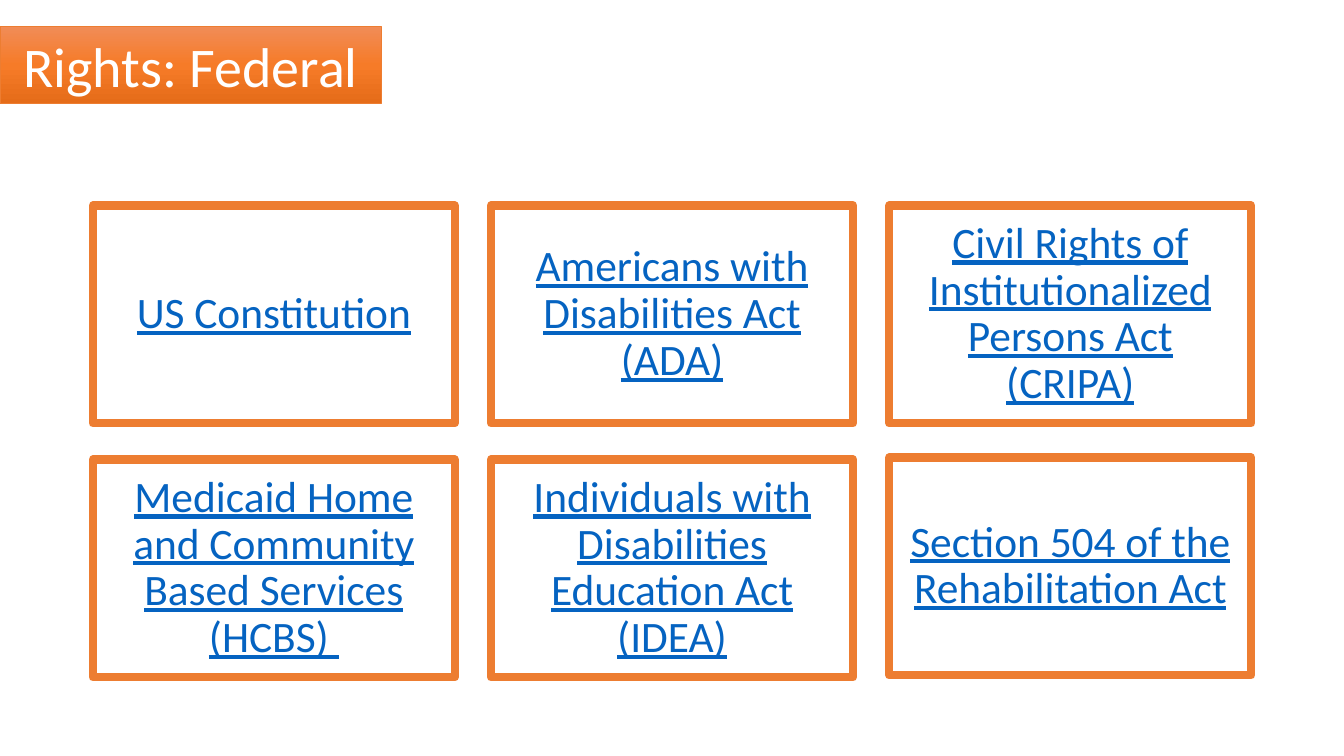
from copy import deepcopy
from dataclasses import dataclass

from pptx import Presentation
from pptx.dml.color import RGBColor
from pptx.enum.shapes import MSO_SHAPE
from pptx.enum.text import MSO_ANCHOR, PP_ALIGN
from pptx.shapes.autoshape import Shape
from pptx.slide import Slide
from pptx.util import Inches, Pt

ORANGE, WHITE, LINK_BLUE = "ED7D31", "FFFFFF", "0563C1"
BANNER_STOPS = [(0, "F18C57"), (0.5, "F67B28"), (1, "E56C19")]

# Card grid, in inches
COLUMNS = 3
GRID_LEFT, GRID_TOP = 0.92, 2.04
CARD_WIDTH, CARD_HEIGHT = 3.59, 2.16
GAP = 0.36
CARD_INSET = 0.13


@dataclass
class Law:
    title: str
    raised: float = 0


LAWS = [
    Law("US Constitution"),
    Law("Americans with Disabilities Act (ADA)"),
    Law("Civil Rights of Institutionalized Persons Act (CRIPA)"),
    Law("Medicaid Home and Community Based Services (HCBS) "),
    Law("Individuals with Disabilities Education Act (IDEA)"),
    Law("Section 504 of the Rehabilitation Act", raised=0.02),
]


def color(value: str) -> RGBColor:
    return RGBColor.from_string(value)


def add_box(slide: Slide, left: float, top: float, width: float, height: float,
            border: float) -> Shape:
    box = slide.shapes.add_shape(MSO_SHAPE.RECTANGLE, Inches(left), Inches(top),
                                 Inches(width), Inches(height))
    box.shadow.inherit = False
    box.line.color.rgb = color(ORANGE)
    box.line.width = Pt(border)
    return box


def write(box: Shape, text: str, text_color: str, font_format: dict,
          inset: dict) -> None:
    frame = box.text_frame
    frame.word_wrap = True
    frame.vertical_anchor = MSO_ANCHOR.MIDDLE
    for side, value in inset.items():
        setattr(frame, side, value)
    paragraph = frame.paragraphs[0]
    paragraph.alignment = PP_ALIGN.CENTER
    run = paragraph.add_run()
    run.text = text
    run.font.color.rgb = color(text_color)
    for attribute, value in font_format.items():
        setattr(run.font, attribute, value)


def add_banner(slide: Slide) -> None:
    banner = add_box(slide, 0, 0.26, 3.78, 0.77, 0.5)
    banner.fill.gradient()
    banner.fill.gradient_angle = 270
    # A new gradient has two stops; the middle one is added here
    stop_list = banner.fill._fill._gradFill.gsLst
    stop_list.insert(1, deepcopy(stop_list[0]))
    for stop, (position, value) in zip(banner.fill.gradient_stops, BANNER_STOPS):
        stop.position = position
        stop.color.rgb = color(value)
    write(banner, "Rights: Federal", WHITE, {"name": "Calibri", "size": Pt(40)}, {})


def add_law_card(slide: Slide, index: int, law: Law) -> None:
    row, column = divmod(index, COLUMNS)
    card = add_box(slide, GRID_LEFT + column * (CARD_WIDTH + GAP),
                   GRID_TOP + row * (CARD_HEIGHT + GAP) - law.raised,
                   CARD_WIDTH, CARD_HEIGHT, 6)
    card.fill.solid()
    card.fill.fore_color.rgb = color(WHITE)
    sides = ("margin_left", "margin_top", "margin_right", "margin_bottom")
    write(card, law.title, LINK_BLUE,
          {"name": "Calibri", "size": Pt(31), "underline": True},
          dict.fromkeys(sides, Inches(CARD_INSET)))
    card.text_frame.paragraphs[0].line_spacing = 0.9


def main() -> None:
    presentation = Presentation()
    presentation.slide_width = Inches(13.33)
    presentation.slide_height = Inches(7.5)
    slide = presentation.slides.add_slide(presentation.slide_layouts[6])

    # Title banner
    add_banner(slide)

    # Federal laws
    for index, law in enumerate(LAWS):
        add_law_card(slide, index, law)

    presentation.save("out.pptx")


if __name__ == "__main__":
    main()
